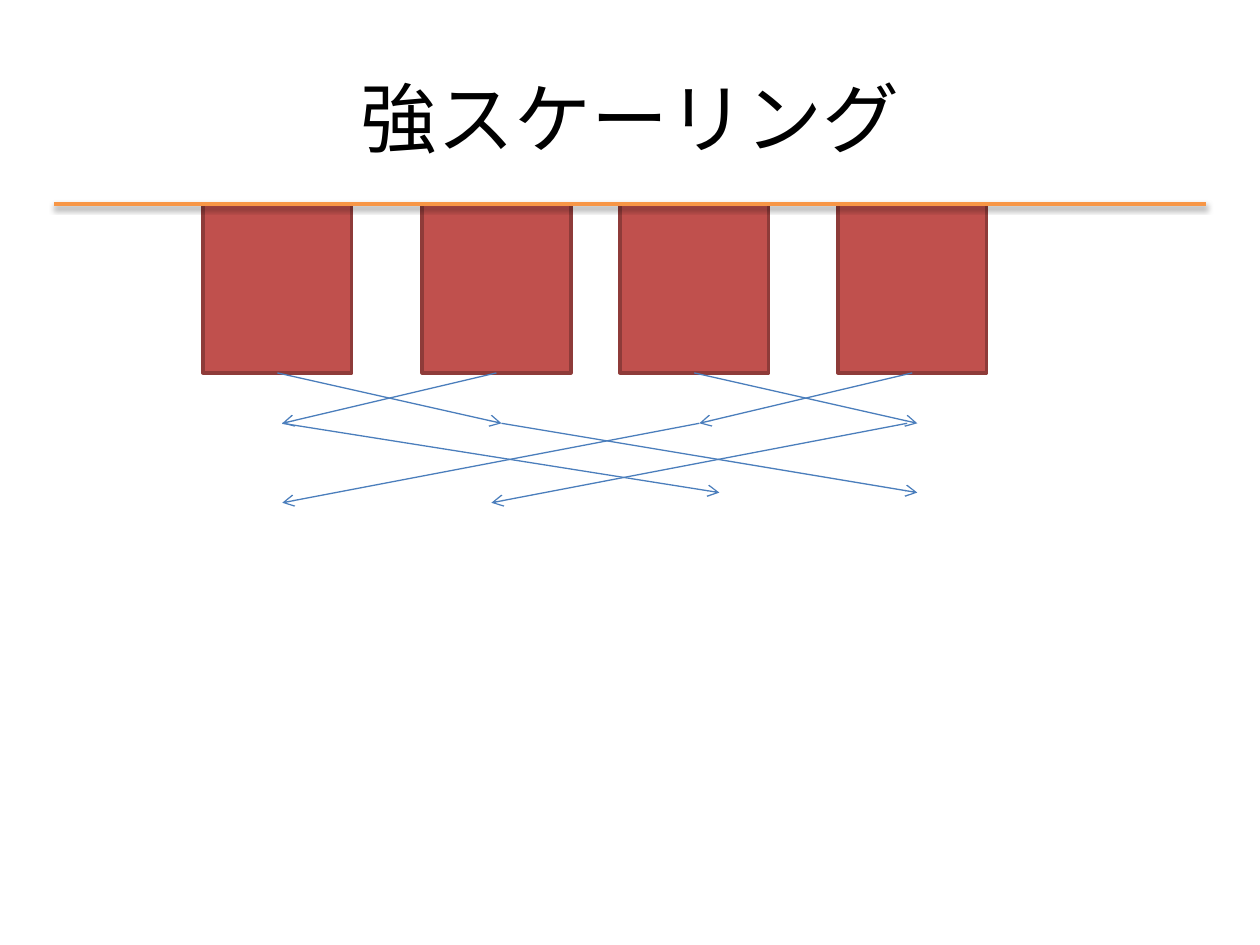
import pptx
import pptx.dml.color
import pptx.enum.shapes
import pptx.enum.text
import pptx.oxml
import pptx.oxml.ns
import pptx.util

Pt = pptx.util.Pt
RGBColor = pptx.dml.color.RGBColor
STRAIGHT = pptx.enum.shapes.MSO_CONNECTOR.STRAIGHT
BLACK = RGBColor(0x00, 0x00, 0x00)
RED = RGBColor(0xC0, 0x50, 0x4D)
DARK_RED = RGBColor(0x8E, 0x3B, 0x39)
BLUE = RGBColor(0x4B, 0x7E, 0xBC)
ORANGE = RGBColor(0xF7, 0x96, 0x46)
NAMESPACE = pptx.oxml.ns.nsdecls("a")
RULE_SHADOW = (
    '<a:outerShdw blurRad="40000" dist="20000" dir="5400000" rotWithShape="0">'
    '<a:srgbClr val="000000"><a:alpha val="38000"/></a:srgbClr></a:outerShdw>'
)


def add_line(start, end, color, width, effect=""):
    line = slide.shapes.add_connector(STRAIGHT, *map(Pt, start + end))
    line.line.color.rgb = color
    line.line.width = Pt(width)
    line._element.spPr.append(
        pptx.oxml.parse_xml(f"<a:effectLst {NAMESPACE}>{effect}</a:effectLst>")
    )
    return line


def add_arrow(start, end):
    arrow = add_line(start, end, BLUE, 0.75)
    arrow.line._get_or_add_ln().append(
        pptx.oxml.parse_xml(f'<a:tailEnd {NAMESPACE} type="arrow"/>')
    )
    return arrow


presentation = pptx.Presentation()
presentation.slide_width = Pt(720)
presentation.slide_height = Pt(540)
slide = presentation.slides.add_slide(presentation.slide_layouts[6])

title = slide.shapes.add_textbox(Pt(36), Pt(21.6), Pt(648), Pt(90))
title.text_frame.word_wrap = True
title.text_frame.vertical_anchor = pptx.enum.text.MSO_ANCHOR.MIDDLE
heading = title.text_frame.paragraphs[0]
heading.text = "強スケーリング"
heading.alignment = pptx.enum.text.PP_ALIGN.CENTER
heading_font = heading.runs[0].font
for attribute, value in {"name": "Calibri", "size": Pt(44)}.items():
    setattr(heading_font, attribute, value)
heading_font.color.rgb = BLACK

rule_y = 116.6
process_width, process_height = 85, 96.5
process_bottom = rule_y + process_height
processes = []
for left in (116, 241.2, 354.2, 478.8):
    process = slide.shapes.add_shape(
        pptx.enum.shapes.MSO_SHAPE.RECTANGLE,
        Pt(left), Pt(rule_y), Pt(process_width), Pt(process_height),
    )
    process.shadow.inherit = False
    process.fill.solid()
    process.fill.fore_color.rgb = RED
    process.line.color.rgb = DARK_RED
    process.line.width = Pt(2)
    processes.append((process, left + process_width / 2))

first_exchange_y = 241.9
for sender, target_x in ((1, 161.3), (0, 286.6), (3, 399.6), (2, 524.2)):
    process, center = processes[sender]
    arrow = add_arrow((center, process_bottom), (target_x, first_exchange_y))
    arrow.begin_connect(process, 2)

for start_x, end_x, end_y in (
    (161.3, 411.1, 281.5),
    (286.6, 524.2, 281.5),
    (399.6, 161.3, 287.3),
    (518.4, 280.8, 287.3),
):
    add_arrow((start_x, first_exchange_y), (end_x, end_y))

add_line((31, rule_y), (689, rule_y), ORANGE, 2, RULE_SHADOW)

presentation.save("out.pptx")
